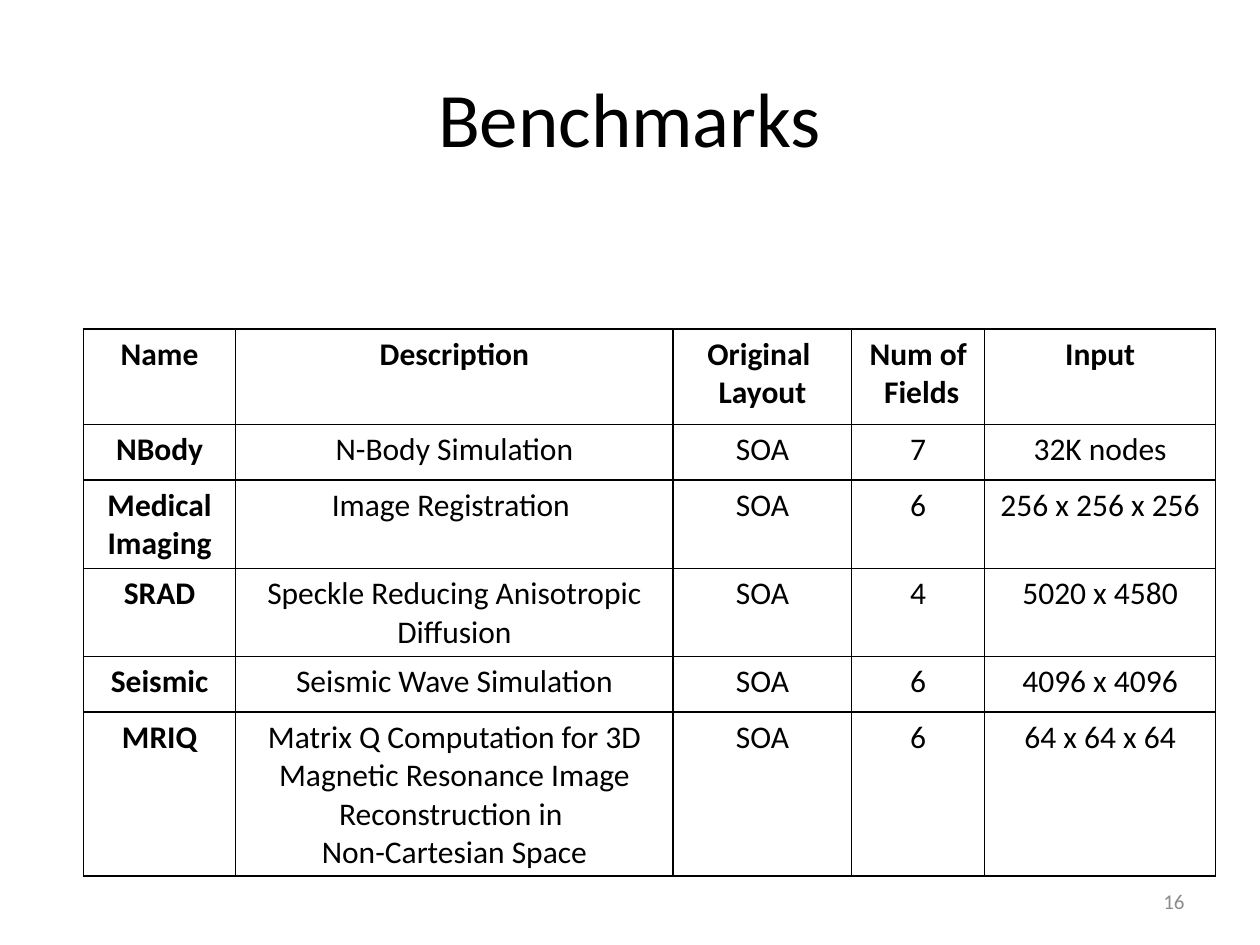
from lxml import etree
from pptx import Presentation
from pptx.dml.color import RGBColor
from pptx.enum.text import MSO_ANCHOR, PP_ALIGN
from pptx.oxml.ns import qn
from pptx.util import Pt

CENTER, RIGHT = PP_ALIGN.CENTER, PP_ALIGN.RIGHT
MIDDLE = MSO_ANCHOR.MIDDLE
BLANK_LAYOUT = 6
FONT = "Calibri"
COLORS = {"text": "000000", "border": "000000", "number": "8C8C8C"}

COL_WIDTHS = [87, 250, 102, 76, 132]
ROW_HEIGHTS = [54.7, 31.7, 31.7, 31.7, 31.7, 54.7]
BENCHMARKS = [
    ["Name", "Description", "Original \nLayout", "Num of\n Fields", "Input"],
    ["NBody", "N-Body Simulation", "SOA", "7", "32K nodes"],
    ["Medical Imaging", "Image Registration ", "SOA", "6", "256 x 256 x 256"],
    ["SRAD", "Speckle Reducing Anisotropic Diffusion", "SOA", "4", "5020 x 4580"],
    ["Seismic", "Seismic Wave Simulation", "SOA", "6", "4096 x 4096"],
    ["MRIQ",
     "Matrix Q Computation for 3D Magnetic Resonance Image Reconstruction in \n"
     "Non-Cartesian Space",
     "SOA", "6", "64 x 64 x 64"],
]


def write_text(tf, text, size=18, color="text", bold=False, align=CENTER):
    """Fill a text frame, one paragraph per line of text."""
    tf.word_wrap = True
    for i, line in enumerate(text.split("\n")):
        p = tf.paragraphs[0] if i == 0 else tf.add_paragraph()
        p.alignment = align
        r = p.add_run()
        r.text = line
        r.font.name = FONT
        r.font.size = Pt(size)
        r.font.bold = bold
        r.font.color.rgb = RGBColor.from_string(COLORS[color])


def add_text(slide, text, left, top, width, height, **fmt):
    sp = slide.shapes.add_textbox(Pt(left), Pt(top), Pt(width), Pt(height))
    sp.text_frame.vertical_anchor = MIDDLE
    write_text(sp.text_frame, text, **fmt)


def set_borders(cell, width=1):
    tc_pr = cell._tc.get_or_add_tcPr()
    for i, side in enumerate(("a:lnL", "a:lnR", "a:lnT", "a:lnB")):
        ln = etree.Element(qn(side), w=str(Pt(width)))
        fill = etree.SubElement(ln, qn("a:solidFill"))
        etree.SubElement(fill, qn("a:srgbClr"), val=COLORS["border"])
        tc_pr.insert(i, ln)


def add_table(slide, rows, left, top, height):
    frame = slide.shapes.add_table(len(rows), len(COL_WIDTHS), Pt(left), Pt(top),
                                   Pt(sum(COL_WIDTHS)), Pt(height))
    table = frame.table
    table.horz_banding = False
    for col, width in zip(table.columns, COL_WIDTHS):
        col.width = Pt(width)
    for row, row_height in zip(table.rows, ROW_HEIGHTS):
        row.height = Pt(row_height)
    frame.height = Pt(height)

    # Header row and name column are bold
    for i, row in enumerate(rows):
        for j, text in enumerate(row):
            cell = table.cell(i, j)
            cell.fill.background()
            set_borders(cell)
            write_text(cell.text_frame, text, bold=i == 0 or j == 0)


def main():
    prs = Presentation()
    prs.slide_width, prs.slide_height = Pt(720), Pt(540)
    slide = prs.slides.add_slide(prs.slide_layouts[BLANK_LAYOUT])

    # Title
    add_text(slide, "Benchmarks", 36, 21.6, 648, 90, size=44)

    # Slide number
    add_text(slide, "16", 516, 500.5, 168, 28.75, size=12, color="number", align=RIGHT)

    # Benchmark table
    add_table(slide, BENCHMARKS, 47.7, 188, 312.5)

    prs.save("out.pptx")


if __name__ == "__main__":
    main()
